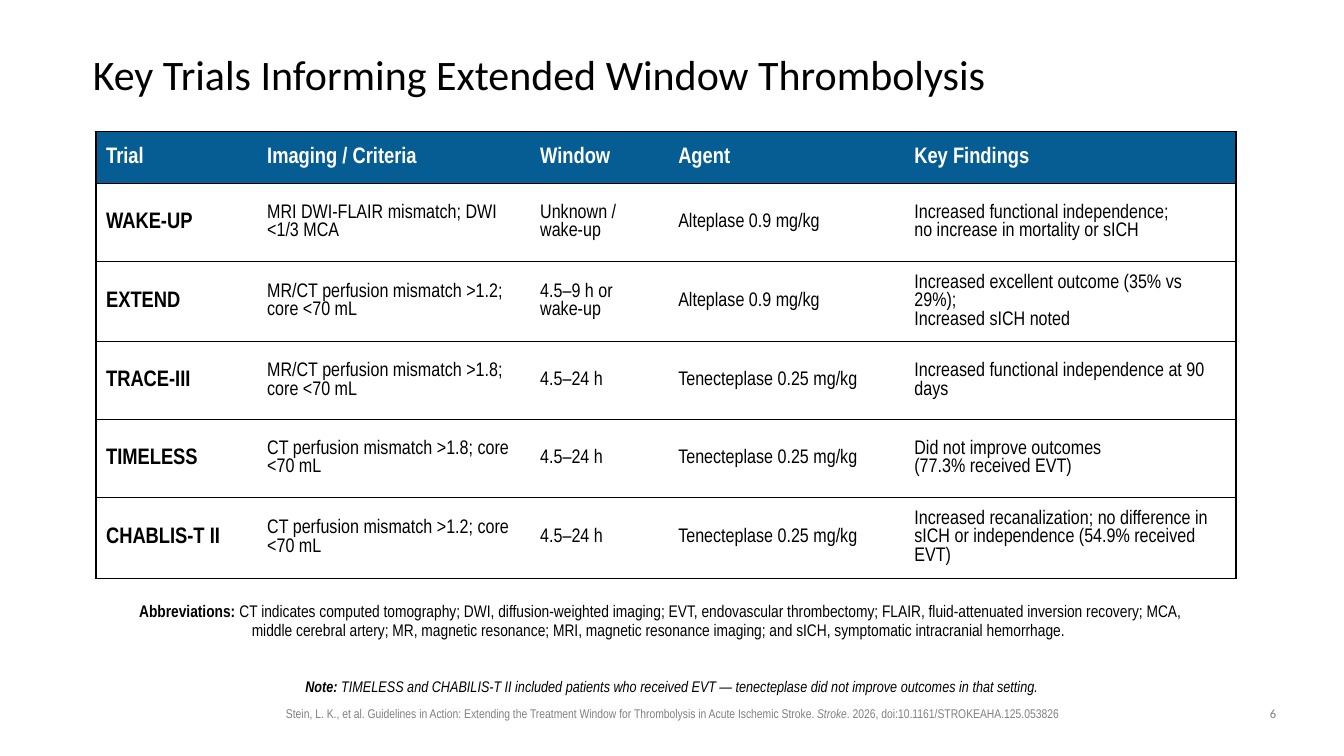
from pptx import Presentation
from pptx.dml.color import RGBColor
from pptx.enum.text import MSO_ANCHOR, PP_ALIGN
from pptx.oxml import parse_xml
from pptx.oxml.ns import nsdecls
from pptx.util import Cm, Pt

BLACK = RGBColor(0x00, 0x00, 0x00)
WHITE = RGBColor(0xFF, 0xFF, 0xFF)
GRAY = RGBColor(0x80, 0x80, 0x80)
BLUE = RGBColor(0x06, 0x5D, 0x93)
NARROW, SANS = "Arial Narrow", "Calibri"
LEFT, CENTER = PP_ALIGN.LEFT, PP_ALIGN.CENTER
TOP, MIDDLE, BOTTOM = MSO_ANCHOR.TOP, MSO_ANCHOR.MIDDLE, MSO_ANCHOR.BOTTOM
INSETS = (0.25, 0.13, 0.25, 0.13)

COLUMNS = [4.06, 6.88, 3.48, 5.95, 8.36]
HEADER_HEIGHT, ROW_HEIGHT = 1.3, 1.96
TRIALS = [
    ["Trial", "Imaging / Criteria", "Window", "Agent", "Key Findings"],
    ["WAKE-UP", "MRI DWI-FLAIR mismatch; DWI <1/3 MCA", "Unknown / wake-up",
     "Alteplase 0.9 mg/kg",
     "Increased functional independence; \vno increase in mortality or sICH"],
    ["EXTEND", "MR/CT perfusion mismatch >1.2; core <70 mL", "4.5–9 h or wake-up",
     "Alteplase 0.9 mg/kg",
     "Increased excellent outcome (35% vs 29%); \vIncreased sICH noted"],
    ["TRACE-III", "MR/CT perfusion mismatch >1.8; core <70 mL", "4.5–24 h",
     "Tenecteplase 0.25 mg/kg", "Increased functional independence at 90 days"],
    ["TIMELESS", "CT perfusion mismatch >1.8; core <70 mL", "4.5–24 h",
     "Tenecteplase 0.25 mg/kg", "Did not improve outcomes \v(77.3% received EVT)"],
    ["CHABLIS-T II", "CT perfusion mismatch >1.2; core <70 mL", "4.5–24 h",
     "Tenecteplase 0.25 mg/kg",
     "Increased recanalization; no difference in sICH or independence "
     "(54.9% received EVT)"],
]


class SlideBuilder:
    def __init__(self, prs):
        self.s = prs.slides.add_slide(prs.slide_layouts[6])

    def set_font(self, p, size, color, name=NARROW, bold=None, italic=None):
        f = p.font
        f.name, f.size, f.bold, f.italic = name, Pt(size), bold, italic
        f.color.rgb = color

    def text(self, box, runs, size, color=BLACK, name=NARROW, align=CENTER,
             anchor=MIDDLE, spacing=None, insets=INSETS, italic=None):
        """Add a one-paragraph box; runs are (text, bold, italic) tuples."""
        tf = self.s.shapes.add_textbox(*map(Cm, box)).text_frame
        tf.word_wrap = True
        tf.vertical_anchor = anchor
        (tf.margin_left, tf.margin_top,
         tf.margin_right, tf.margin_bottom) = map(Cm, insets)
        p = tf.paragraphs[0]
        p.alignment, p.line_spacing = align, spacing
        self.set_font(p, size, color, name, italic=italic)
        for words, bold, slanted in runs:
            r = p.add_run()
            r.text = words
            r.font.bold, r.font.italic = bold, slanted

    def border(self, cell, side, visible):
        paint = (f'<a:solidFill><a:srgbClr val="{BLACK}"/></a:solidFill>'
                 if visible else "<a:noFill/>")
        cell._tc.get_or_add_tcPr().append(parse_xml(
            f'<a:ln{side} {nsdecls("a")} w="{Pt(1)}">{paint}</a:ln{side}>'))

    def cell(self, cell, words, size, color, fill, bold, sides):
        for side in "LRTB":
            self.border(cell, side, side in sides)
        cell.fill.solid()
        cell.fill.fore_color.rgb = fill
        cell.vertical_anchor = MIDDLE
        p = cell.text_frame.paragraphs[0]
        p.text = words
        self.set_font(p, size, color, bold=bold)

    def table(self, left, top, widths, heights, rows):
        table = self.s.shapes.add_table(
            len(rows), len(widths), Cm(left), Cm(top),
            Cm(sum(widths)), Cm(sum(heights))).table
        table.horz_banding = False
        for column, width in zip(table.columns, widths):
            column.width = Cm(width)
        for i, row in enumerate(rows):
            table.rows[i].height = Cm(heights[i])
            header = i == 0
            for j, words in enumerate(row):
                strong = header or j == 0
                sides = "TB" + ("L" if j == 0 else "")
                sides += "R" if j == len(widths) - 1 else ""
                self.cell(table.cell(i, j), words, 16 if strong else 14,
                          WHITE if header else BLACK, BLUE if header else WHITE,
                          strong, sides)


def main():
    prs = Presentation()
    prs.slide_width, prs.slide_height = Cm(33.87), Cm(19.05)
    slide = SlideBuilder(prs)

    # Title
    slide.text((2.34, 1.02, 29.21, 1.83),
               [("Key Trials Informing Extended Window Thrombolysis", None, None)],
               30, name=SANS, align=LEFT, spacing=0.9, insets=(0, 0, 0, 0))

    # Trial table
    heights = [HEADER_HEIGHT] + [ROW_HEIGHT] * (len(TRIALS) - 1)
    slide.table(2.42, 3.32, COLUMNS, heights, TRIALS)

    # Abbreviations and note
    slide.text((3.4, 14.88, 26.75, 1.37), [
        ("Abbreviations: ", True, None),
        ("CT indicates computed tomography; DWI, diffusion-weighted imaging; "
         "EVT, endovascular thrombectomy; FLAIR, fluid-attenuated inversion "
         "recovery; MCA, middle cerebral artery; MR, magnetic resonance; MRI, "
         "magnetic resonance imaging; and sICH, symptomatic intracranial "
         "hemorrhage. ", None, None),
    ], 12, anchor=BOTTOM, spacing=0.9, insets=(0, 0.13, 0.25, 0.13))
    slide.text((5.26, 17.07, 23.37, 0.46), [
        ("Note: ", True, None),
        ("TIMELESS and CHABILIS-T II included patients who received EVT — "
         "tenecteplase did not improve outcomes in that setting.", None, None),
    ], 11, italic=True)

    # Citation and page number
    slide.text((6, 17.65, 21.89, 0.64), [
        ("Stein, L. K., et al. Guidelines in Action: Extending the Treatment "
         "Window for Thrombolysis in Acute Ischemic Stroke. ", None, None),
        ("Stroke", None, True),
        (". 2026, doi:10.1161/STROKEAHA.125.053826", None, None),
    ], 9, color=GRAY, anchor=TOP)
    slide.text((31.55, 17.65, 1.07, 0.66), [("6", None, None)], 9,
               color=GRAY, name=SANS, anchor=TOP)

    prs.save("out.pptx")


if __name__ == "__main__":
    main()
